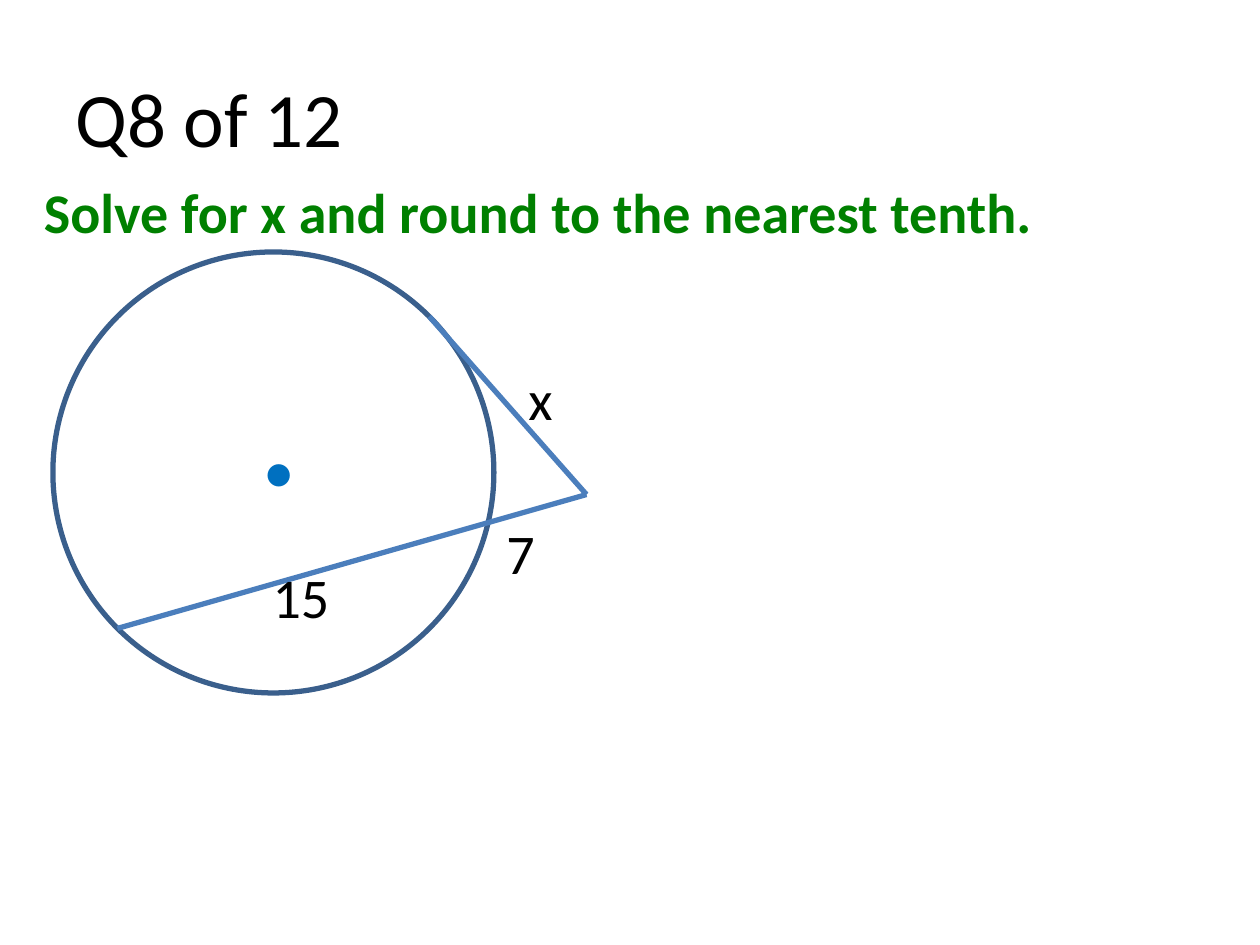
from math import sqrt

from lxml.etree import SubElement
from pptx import Presentation
from pptx.dml.color import RGBColor
from pptx.enum.shapes import MSO_CONNECTOR, MSO_SHAPE
from pptx.enum.text import MSO_ANCHOR
from pptx.oxml.ns import qn
from pptx.util import Inches, Pt

COLORS = {"ink": "000000", "prompt": "008000", "circle": "3A5F8C",
          "segment": "4B7EBC", "center": "0070C0"}
FONT = "Calibri"
WIDTH, HEIGHT = 10, 7.5
LINE = Pt(3)


def rgb(name):
    return RGBColor.from_string(COLORS[name])


def add_text(s, box, text, size, color="ink", bold=False,
             anchor=MSO_ANCHOR.TOP, wrap=True):
    tf = s.shapes.add_textbox(*map(Inches, box)).text_frame
    tf.word_wrap = wrap
    tf.vertical_anchor = anchor
    tf.text = text
    font = tf.paragraphs[0].runs[0].font
    font.name, font.size, font.bold = FONT, Pt(size), bold
    font.color.rgb = rgb(color)


def add_segment(s, start, end):
    line = s.shapes.add_connector(MSO_CONNECTOR.STRAIGHT,
                                  *map(Inches, (*start, *end)))
    line.line.color.rgb = rgb("segment")
    line.line.width = LINE
    SubElement(line._element.spPr, qn("a:effectLst"))


def add_heading(s, box):
    """Question number above the prompt, in a band of the slide."""
    x, y, w, h = box
    add_text(s, (x + 0.25, y, w - 0.33, h * 0.67), "Q8 of 12", 44,
             anchor=MSO_ANCHOR.MIDDLE)
    add_text(s, (x, y + h * 0.465, w, h * 0.535),
             "Solve for x and round to the nearest tenth.", 32,
             "prompt", bold=True, anchor=MSO_ANCHOR.MIDDLE)


def add_circle_diagram(s, x, y, size):
    """Circle with a tangent and a secant that meet at an outside point."""
    def at(u, v):
        return x + u * size, y + v * size

    circle = s.shapes.add_shape(MSO_SHAPE.OVAL,
                                *map(Inches, (x, y, size, size)))
    circle.shadow.inherit = False
    circle.fill.background()
    circle.line.color.rgb = rgb("circle")
    circle.line.width = LINE

    near = (1 - sqrt(0.5)) / 2  # both end points lie on the diagonals
    far = 1 - near
    outside = at(1.21, 0.55)
    add_segment(s, at(near, far), outside)
    add_text(s, (*at(0.45, 0.39), 0.43, 0.71), "•", 36, "center", wrap=False)
    add_segment(s, at(far, near), outside)

    for text, u, v in (("x", 1.05, 0.24), ("7", 1, 0.59), ("15", 0.47, 0.69)):
        add_text(s, (*at(u, v), size * 0.31, 0.64), text, 32)


def main():
    prs = Presentation()
    prs.slide_width, prs.slide_height = Inches(WIDTH), Inches(HEIGHT)
    s = prs.slides.add_slide(prs.slide_layouts[6])
    add_heading(s, (WIDTH * 0.025, HEIGHT * 0.04, WIDTH * 0.933, HEIGHT * 0.25))
    add_circle_diagram(s, 0.42, 2, 3.5)
    prs.save("out.pptx")


if __name__ == "__main__":
    main()
